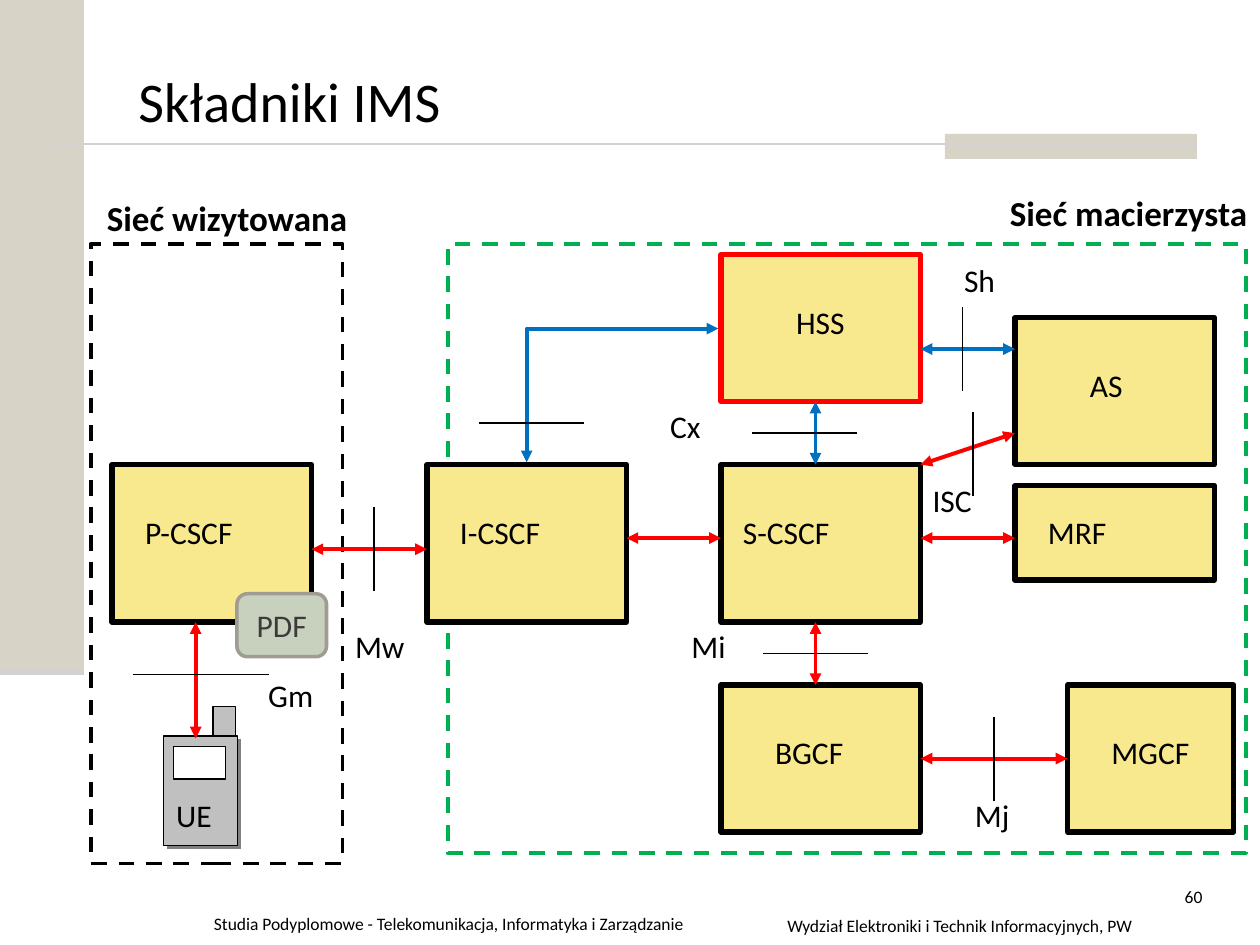
from lxml import etree
from pptx import Presentation
from pptx.dml.color import RGBColor
from pptx.enum import dml, shapes, text
from pptx.oxml import ns
from pptx.util import Pt

deck = Presentation()
deck.slide_width, deck.slide_height = Pt(720), Pt(540)
page = deck.slides.add_slide(deck.slide_layouts[6])
paint = RGBColor.from_string
BLACK, RED, BLUE, GREEN = "000000", "FF0000", "0070C0", "00B050"
BEIGE, SILVER, YELLOW, GREY = "D8D3C7", "D4D2D0", "F9E98E", "C0C0C0"


def add_box(left, top, width, height, fill=None, line=None, weight=3, kind="RECTANGLE"):
    box = page.shapes.add_shape(shapes.MSO_SHAPE[kind], Pt(left), Pt(top), Pt(width), Pt(height))
    box.shadow.inherit = False
    if fill:
        box.fill.solid()
        box.fill.fore_color.rgb = paint(fill)
    else:
        box.fill.background()
    if line:
        box.line.color.rgb = paint(line)
        box.line.width = Pt(weight)
    else:
        box.line.fill.background()
    return box


def add_line(start, end, color=BLACK, weight=0.75, arrows=False, kind="STRAIGHT"):
    line = page.shapes.add_connector(shapes.MSO_CONNECTOR[kind], *map(Pt, start + end))
    line.line.color.rgb = paint(color)
    line.line.width = Pt(weight)
    if arrows:
        outline = line.line._get_or_add_ln()
        for tag in ("a:headEnd", "a:tailEnd"):
            etree.SubElement(outline, ns.qn(tag), type="triangle")
    etree.SubElement(line._element.spPr, ns.qn("a:effectLst"))
    return line


add_box(0, 0, 48, 384, BEIGE)
add_box(540, 76.5, 144, 14.4, BEIGE)
add_line((30, 82.3), (684, 82.3), SILVER, 1.5)
add_line((0, 384), (48, 384), SILVER, 3.5)

phone = add_box(93.6, 420.5, 42, 62.5, GREY, BLACK, 0.75)
effects = phone._element.spPr.find(ns.qn("a:effectLst"))
shadow = etree.SubElement(effects, ns.qn("a:outerShdw"), dist="35560", dir="2700000", algn="ctr", rotWithShape="0")
etree.SubElement(shadow, ns.qn("a:srgbClr"), val="808080")
add_box(99.2, 426.5, 29.6, 18.7, "FFFFFF", BLACK, 0.75)
add_box(121.8, 403.9, 12.8, 16.6, GREY, BLACK, 0.75)

for area, color in (((51.8, 139.5, 144, 354), BLACK), ((255.8, 139.5, 456, 348), GREEN)):
    add_box(*area, line=color, weight=2.25).line.dash_style = dml.MSO_LINE.DASH

for left, top, width, height, color in (
    (64, 265.5, 114, 90, BLACK),
    (244, 265.5, 114, 90, BLACK),
    (412, 265.5, 114, 90, BLACK),
    (610, 391.5, 95, 84, BLACK),
    (412, 391.5, 114, 84, BLACK),
    (412, 145.5, 114, 84, RED),
    (580, 181.5, 114, 84, BLACK),
    (580, 277.5, 114, 54, BLACK),
):
    add_box(left, top, width, height, YELLOW, color)

for start, end, color in (
    ((111.8, 422), (111.8, 355.5), RED),
    ((178, 313.8), (244, 313.8), RED),
    ((358, 307.5), (412, 307.5), RED),
    ((526, 433.5), (610, 433.5), RED),
    ((466, 391.5), (466, 355.5), RED),
    ((466, 265.5), (466, 229.5), BLUE),
    ((526, 307.5), (580, 307.5), RED),
    ((526, 265.5), (580, 247.5), RED),
    ((526, 199.5), (580, 199.5), BLUE),
):
    add_line(start, end, color, 2.25, arrows=True)

bend = add_line((317.5, 171.2), (393.9, 280.7), BLUE, 2.25, arrows=True, kind="ELBOW")
bend._element.spPr.find(ns.qn("a:prstGeom")).set("prst", "bentConnector2")
bend._element.spPr.find(ns.qn("a:xfrm")).set("rot", "16200000")

for left, top, length in ((75.8, 385.5, 78), (436, 373.5, 60), (430, 247.5, 60), (273.8, 241.7, 60)):
    add_line((left, top), (left + length, top))
for left, top in ((213.8, 289.5), (556, 235.5), (568, 409.5), (550, 175.5)):
    add_line((left, top), (left, top + 48))

pdf = add_box(135.4, 339.3, 51.2, 36, "C8D0BE", "A09C93", 2, "ROUNDED_RECTANGLE")
pdf.text_frame.vertical_anchor = text.MSO_ANCHOR.MIDDLE
para = pdf.text_frame.paragraphs[0]
para.alignment = text.PP_ALIGN.CENTER
span = para.add_run()
span.text = "PDF"
span.font.name, span.font.size = "Calibri", Pt(18)
span.font.color.rgb = paint("3B3B3B")

labels = [
    (words, left, top, width, 28.8, 18, "LEFT")
    for words, left, top, width in (
        ("UE", 93.6, 451.5, 35.3),
        ("P-CSCF", 75.8, 289.5, 65.5),
        ("I-CSCF", 255.8, 289.5, 60.5),
        ("S-CSCF", 417.5, 289.5, 64.8),
        ("BGCF", 435.8, 415.5, 54),
        ("MGCF", 628, 415.5, 59.8),
        ("HSS", 447.8, 169.5, 42.5),
        ("AS", 615.8, 205.5, 33),
        ("MRF", 591.8, 289.5, 48.2),
        ("Gm", 146.2, 382.5, 40.3),
        ("Mw", 195.8, 355, 42.5),
        ("ISC", 525.8, 271.5, 37.4),
        ("Mj", 550, 451.5, 34.6),
        ("Mi", 388, 355, 34.6),
        ("Cx", 375.8, 229, 32.4),
        ("Sh", 543.8, 145.5, 32.4),
    )
] + [
    ("Składniki IMS", 72, 20.2, 612, 74.2, 32, "LEFT"),
    ("Sieć wizytowana", 54, 108.7, 153.4, 31.7, 20, "LEFT"),
    ("Sieć macierzysta", 570, 106, 151.2, 31.7, 20, "LEFT"),
    ("Studia Podyplomowe - Telekomunikacja, Informatyka i Zarządzanie", 115.2, 518.4, 321, 20.2, 10, "LEFT"),
    ("Wydział Elektroniki i Technik Informacyjnych, PW", 431.3, 519.1, 234, 19.4, 10, "CENTER"),
    ("60", 659.5, 502.6, 34.6, 36, 10, "RIGHT"),
]
for words, left, top, width, height, size, align in labels:
    box = page.shapes.add_textbox(Pt(left), Pt(top), Pt(width), Pt(height))
    frame = box.text_frame
    frame.word_wrap = size not in (18, 20)
    if size == 32:
        frame.vertical_anchor = text.MSO_ANCHOR.MIDDLE
    para = frame.paragraphs[0]
    para.alignment = text.PP_ALIGN[align]
    span = para.add_run()
    span.text = words
    span.font.name, span.font.size = "Calibri", Pt(size)
    span.font.bold = size == 20
    span.font.color.rgb = paint(BLACK)

deck.save("out.pptx")
